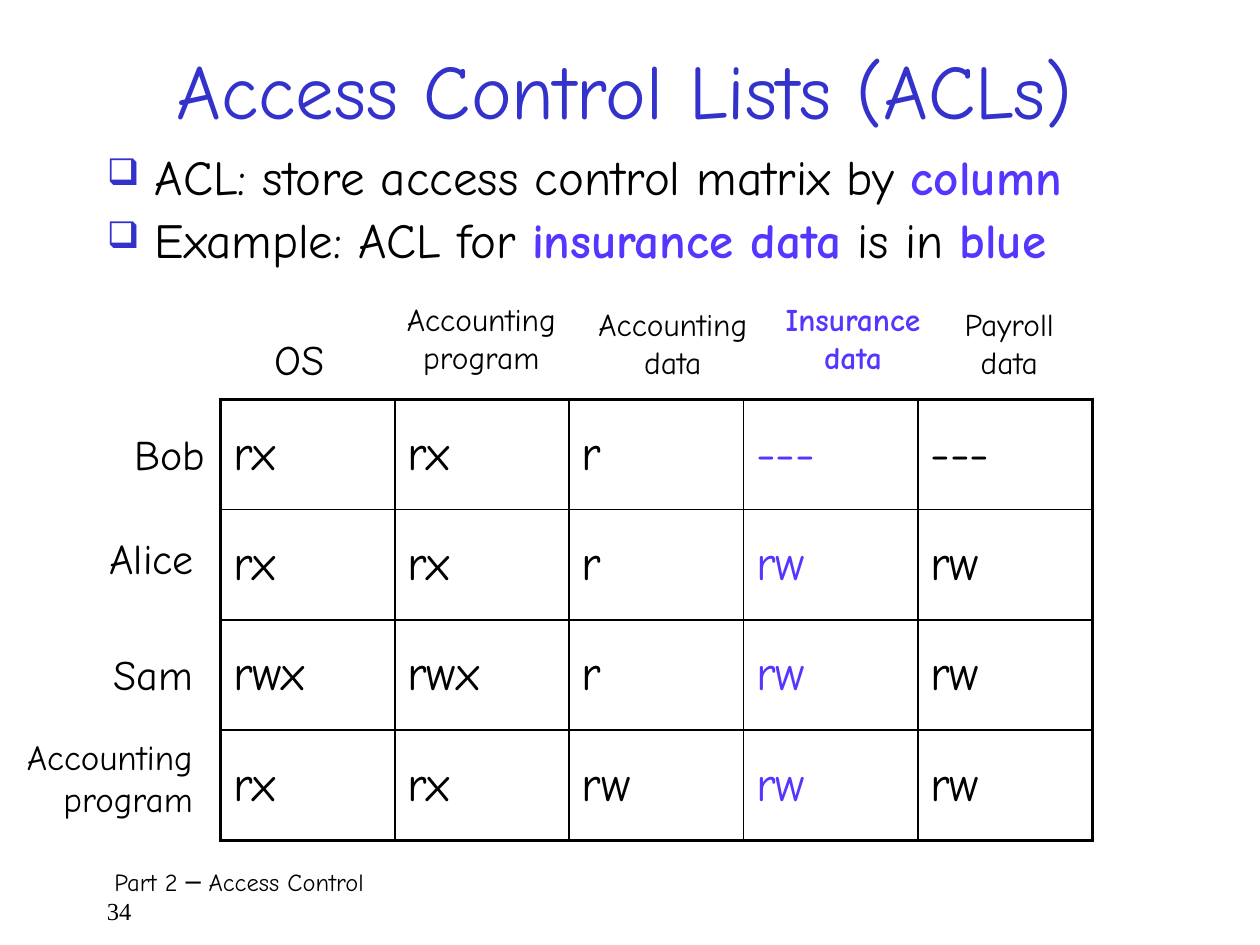
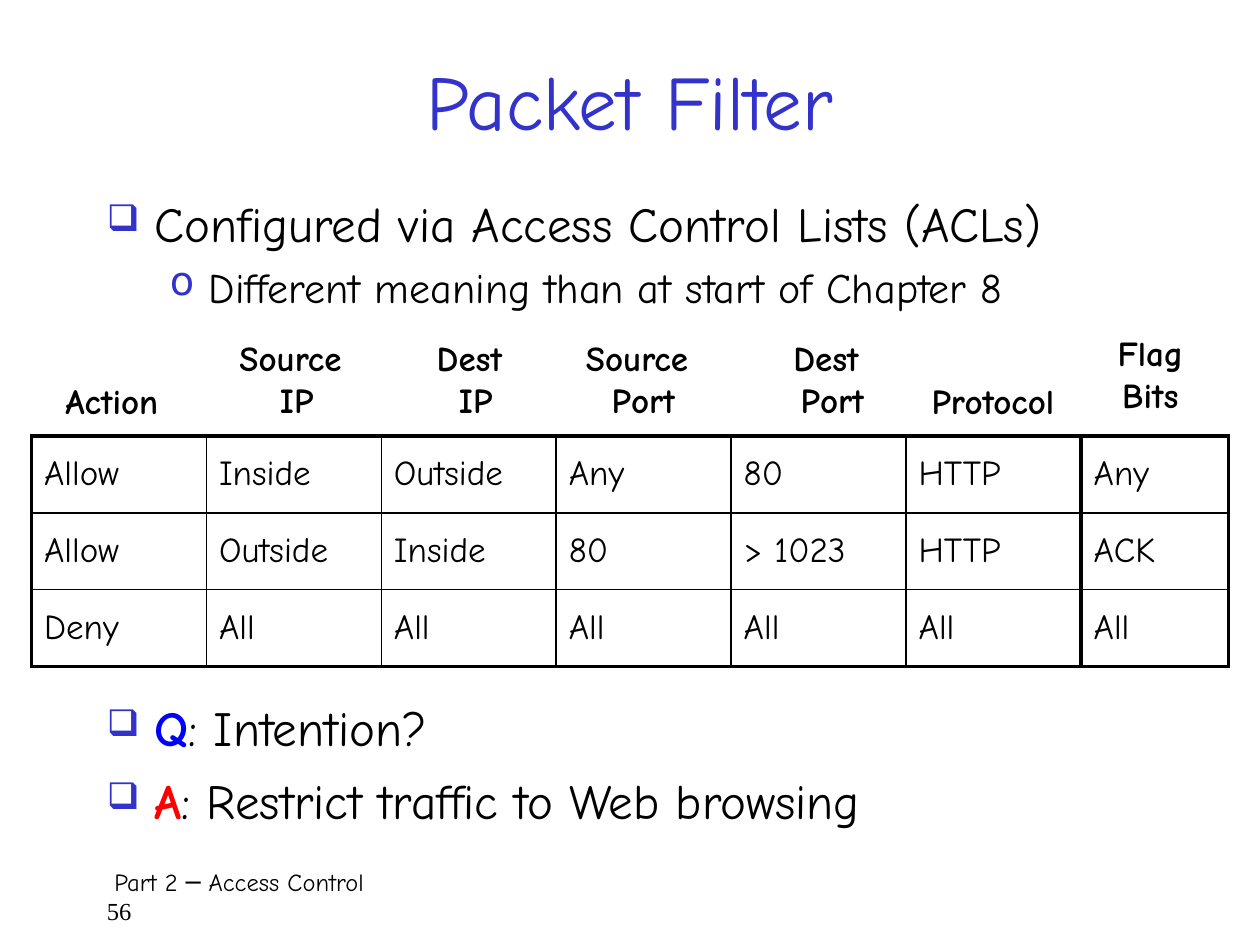
import pptx
import pptx.dml.color
import pptx.enum.text
import pptx.oxml
import pptx.oxml.ns
import pptx.util

Inches = pptx.util.Inches
Pt = pptx.util.Pt
ALIGN = pptx.enum.text.PP_ALIGN
ANCHOR = pptx.enum.text.MSO_ANCHOR
AUTO_SIZE = pptx.enum.text.MSO_AUTO_SIZE

# Shared look
BODY_FONT = "Comic Neue"
NUMBER_FONT = "Times New Roman"
BLACK, TITLE_BLUE, ACL_BLUE = "000000", "3333CC", "5437FF"
QUESTION_BLUE, ANSWER_RED = "0000FF", "FF0000"
THICK, THIN = 2.25, 1
SPACE_BEFORE = 0.2  # share of the text size
FOOTER = {"text": "Part 2 ─ Access Control", "box": (0.75, 6.83, 8.58, 0.5), "size": 14}
# level: bullet character, size percent, left margin, hanging indent, text size
BULLETS = [("❑", 75, 0.38, 0.38, 28), ("o", 95, 0.81, 0.31, 24)]

# Content: a run is text or (text, colour), coloured runs in lists are bold
ACL_SLIDE = {
    "number": "34",
    "title": ("Access Control Lists (ACLs)", (0.67, 0.33, 8.58, 0.75)),
    "lists": [{
        "box": (0.75, 1.17, 8.58, 1.25), "line": 0.9, "after": 0,
        "items": [
            (0, ["ACL: store access control matrix by ", ("column", ACL_BLUE)]),
            (0, ["Example: ACL for ", ("insurance data", ACL_BLUE),
                 " is in ", ("blue", ACL_BLUE)]),
        ],
    }],
    "tables": [{
        "box": (1.75, 3.17, 6.92, 3.5), "size": 28, "blue_column": 3,
        "rows": [
            ["rx", "rx", "r", "---", "---"],
            ["rx", "rx", "r", "rw", "rw"],
            ["rwx", "rwx", "r", "rw", "rw"],
            ["rx", "rx", "rw", "rw", "rw"],
        ],
    }],
    "label_format": {"wrap": False, "bold": False},
    # lines, box, size, alignment, colour
    "labels": [
        (["OS"], (2.08, 2.6, 0.7, 0.57), 24, ALIGN.LEFT, BLACK),
        (["Accounting", "program"], (3.08, 2.33, 1.48, 0.8), 18, ALIGN.CENTER, BLACK),
        (["Accounting", "data"], (4.6, 2.37, 1.48, 0.8), 18, ALIGN.CENTER, BLACK),
        (["Insurance", "data"], (6.08, 2.33, 1.38, 0.8), 18, ALIGN.CENTER, ACL_BLUE),
        (["Payroll", "data"], (7.52, 2.37, 0.98, 0.8), 18, ALIGN.CENTER, BLACK),
        (["Bob"], (0.97, 3.35, 0.78, 0.57), 24, ALIGN.LEFT, BLACK),
        (["Alice"], (0.77, 4.18, 0.98, 0.57), 24, ALIGN.LEFT, BLACK),
        (["Sam"], (0.8, 5.1, 0.86, 0.57), 24, ALIGN.LEFT, BLACK),
        (["Accounting", "program"], (0, 5.79, 1.63, 0.88), 20, ALIGN.RIGHT, BLACK),
    ],
}

FILTER_SLIDE = {
    "number": "56",
    "title": ("Packet Filter", (0.75, 0.33, 8.5, 0.92)),
    "lists": [
        {
            "box": (0.75, 1.58, 8.67, 1.08), "line": 0.8, "after": 6,
            "items": [
                (0, ["Configured via Access Control Lists (ACLs)"]),
                (1, ["Different meaning than at start of Chapter 8"]),
            ],
        },
        {
            "box": (0.75, 5.54, 8.5, 1.17), "line": 0.9, "after": 6,
            "items": [
                (0, [("Q", QUESTION_BLUE), ": Intention?"]),
                (0, [("A", ANSWER_RED), ": Restrict traffic to Web browsing"]),
            ],
        },
    ],
    "tables": [
        {
            "box": (0.25, 3.46, 8.33, 1.83), "size": 20, "blue_column": None,
            "rows": [
                ["Allow", "Inside", "Outside", "Any", "80", "HTTP"],
                ["Allow", "Outside", "Inside", "80", "> 1023", "HTTP"],
                ["Deny", "All", "All", "All", "All", "All"],
            ],
        },
        {
            "box": (8.58, 3.46, 1.17, 1.83), "size": 20, "blue_column": None,
            "rows": [["Any"], ["ACK"], ["All"]],
        },
    ],
    "label_format": {"wrap": True, "bold": True},
    "labels": [
        (["Action"], (0.42, 2.96, 1.05, 0.49), 20, ALIGN.LEFT, BLACK),
        (["Source ", "IP"], (1.75, 2.62, 1.21, 0.88), 20, ALIGN.CENTER, BLACK),
        (["Dest ", "IP"], (3.17, 2.62, 1.21, 0.88), 20, ALIGN.CENTER, BLACK),
        (["Source ", "Port"], (4.5, 2.62, 1.21, 0.88), 20, ALIGN.CENTER, BLACK),
        (["Dest ", "Port"], (6, 2.62, 1.21, 0.88), 20, ALIGN.CENTER, BLACK),
        (["Protocol"], (7.17, 2.96, 1.42, 0.49), 20, ALIGN.CENTER, BLACK),
        (["Flag", "Bits"], (8.42, 2.58, 1.42, 0.88), 20, ALIGN.CENTER, BLACK),
    ],
}


# Formatting helpers
def set_attributes(target, values):
    for name, value in values.items():
        setattr(target, name, value)


def color(hex_string):
    return pptx.dml.color.RGBColor.from_string(hex_string)


def add_run(paragraph, text, size, hex_string=BLACK, bold=False, font=BODY_FONT):
    run = paragraph.add_run()
    run.text = text
    set_attributes(run.font, {"name": font, "size": Pt(size), "bold": bold})
    run.font.color.rgb = color(hex_string)


def add_xml(parent, tag, **attributes):
    element = pptx.oxml.parse_xml(f"<a:{tag} {pptx.oxml.ns.nsdecls('a')}/>")
    for name, value in attributes.items():
        element.set(name, str(value))
    parent.append(element)
    return element


def add_solid_fill(parent, hex_string):
    add_xml(add_xml(parent, "solidFill"), "srgbClr", val=hex_string)


def add_text_frame(slide, box, wrap=True):
    frame = slide.shapes.add_textbox(*map(Inches, box)).text_frame
    frame.word_wrap = wrap
    return frame


def add_paragraphs(frame, count):
    return [frame.paragraphs[0]] + [frame.add_paragraph() for _ in range(count - 1)]


def set_bullet(paragraph, character, percent, margin, hanging):
    properties = paragraph._p.get_or_add_pPr()
    properties.set("marL", str(Inches(margin)))
    properties.set("indent", str(-Inches(hanging)))
    add_xml(add_xml(properties, "buClr"), "srgbClr", val=TITLE_BLUE)
    add_xml(properties, "buSzPct", val=percent * 1000)
    add_xml(properties, "buChar", char=character)


def set_borders(cell, widths):
    properties = cell._tc.get_or_add_tcPr()
    for position, (side, width) in enumerate(widths.items()):
        line = add_xml(properties, f"ln{side}", w=Pt(width))
        add_solid_fill(line, BLACK)
        properties.insert(position, line)


# Slide parts
def add_title(slide, text, box):
    title = slide.shapes.title
    set_attributes(title, dict(zip(("left", "top", "width", "height"), map(Inches, box))))
    set_attributes(title.text_frame, {
        "word_wrap": True, "auto_size": AUTO_SIZE.NONE, "vertical_anchor": ANCHOR.MIDDLE})
    paragraph = title.text_frame.paragraphs[0]
    paragraph.alignment = ALIGN.CENTER
    add_run(paragraph, text, 44, TITLE_BLUE)


def add_footer(slide, number):
    name, page = add_paragraphs(add_text_frame(slide, FOOTER["box"]), 2)
    name._p.get_or_add_pPr().set("indent", str(Inches(0.06)))
    add_run(name, FOOTER["text"], FOOTER["size"])
    add_run(page, number, FOOTER["size"], font=NUMBER_FONT)


def add_list(slide, content):
    frame = add_text_frame(slide, content["box"])
    paragraphs = add_paragraphs(frame, len(content["items"]))
    for paragraph, (level, runs) in zip(paragraphs, content["items"]):
        *bullet, size = BULLETS[level]
        set_attributes(paragraph, {
            "level": level, "line_spacing": content["line"],
            "space_before": Pt(size * SPACE_BEFORE), "space_after": Pt(content["after"])})
        set_bullet(paragraph, *bullet)
        for run in runs:
            if isinstance(run, tuple):
                add_run(paragraph, run[0], size, run[1], bold=True)
            else:
                add_run(paragraph, run, size)


def add_grid(slide, content):
    rows, size = content["rows"], content["size"]
    row_count, column_count = len(rows), len(rows[0])
    table = slide.shapes.add_table(
        row_count, column_count, *map(Inches, content["box"])).table
    set_attributes(table, {"first_row": False, "horz_banding": False})
    for row, texts in enumerate(rows):
        for column, text in enumerate(texts):
            cell = table.cell(row, column)
            cell.vertical_anchor = ANCHOR.MIDDLE
            cell.fill.background()
            # Thick on the outside, thin between cells
            outside = {"L": column == 0, "R": column == column_count - 1,
                       "T": row == 0, "B": row == row_count - 1}
            set_borders(cell, {side: THICK if edge else THIN
                               for side, edge in outside.items()})
            paragraph = cell.text_frame.paragraphs[0]
            paragraph.space_before = Pt(size * SPACE_BEFORE)
            add_run(paragraph, text, size,
                    ACL_BLUE if column == content["blue_column"] else BLACK)


def add_label(slide, lines, box, size, alignment, hex_string, wrap, bold):
    frame = add_text_frame(slide, box, wrap)
    for paragraph, line in zip(add_paragraphs(frame, len(lines)), lines):
        paragraph.alignment = alignment
        add_run(paragraph, line, size, hex_string, bold or hex_string == ACL_BLUE)


def add_slide(presentation, content):
    slide = presentation.slides.add_slide(presentation.slide_layouts[5])
    add_footer(slide, content["number"])
    add_title(slide, *content["title"])
    for bullet_list in content["lists"]:
        add_list(slide, bullet_list)
    for grid in content["tables"]:
        add_grid(slide, grid)
    for label in content["labels"]:
        add_label(slide, *label, **content["label_format"])


def main():
    presentation = pptx.Presentation()
    set_attributes(presentation, {"slide_width": Inches(10), "slide_height": Inches(7.5)})
    for content in (ACL_SLIDE, FILTER_SLIDE):
        add_slide(presentation, content)
    presentation.save("out.pptx")


if __name__ == "__main__":
    main()
